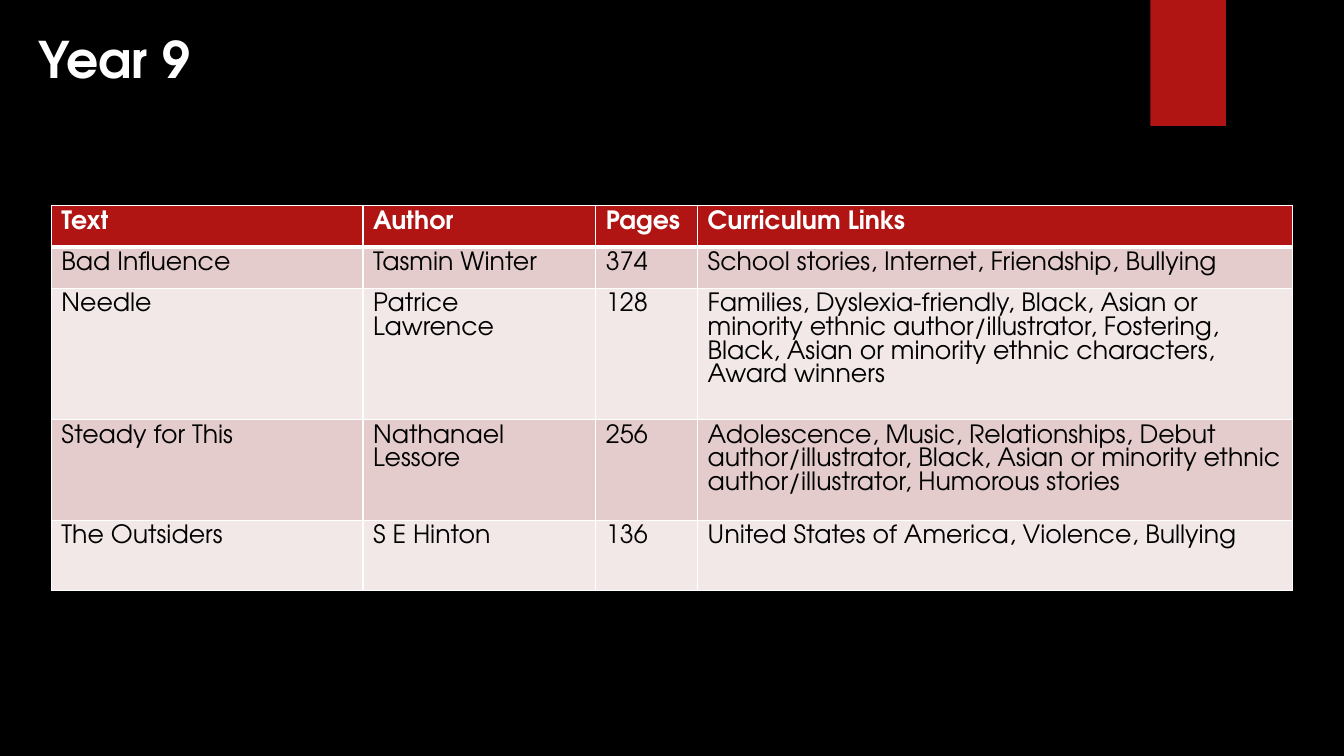
from dataclasses import dataclass

from lxml.etree import SubElement as Sub
from pptx import Presentation
from pptx.dml.color import RGBColor as Rgb
from pptx.enum.shapes import MSO_SHAPE as Shape
from pptx.enum.text import MSO_ANCHOR as Anchor, PP_ALIGN as Align
from pptx.oxml.ns import qn
from pptx.util import Inches, Pt


@dataclass(frozen=True)
class Theme:
    """Colours, font and type sizes of the slide."""
    back: str = "000000"
    red: str = "B01513"
    white: str = "FFFFFF"
    ink: str = "000000"
    bands: tuple = ("E4CCCC", "F2E8E7")
    font: str = "TeX Gyre Adventor"
    title: int = 36
    body: int = 18


THEME = Theme()
COLS = (3.09, 2.31, 1.01, 5.9)
ROWS = (0.41, 0.41, 1.3, 1.0, 0.7)
BOOKS = (
    ("Text", "Author", "Pages", "Curriculum Links"),
    ("Bad Influence", "Tasmin Winter", "374",
     "School stories, Internet, Friendship, Bullying"),
    ("Needle", "Patrice Lawrence", "128",
     "Families, Dyslexia-friendly, Black, Asian or minority ethnic "
     "author/illustrator, Fostering, Black, Asian or minority ethnic "
     "characters, Award winners"),
    ("Steady for This", "Nathanael Lessore", "256",
     "Adolescence, Music, Relationships, Debut author/illustrator, Black, "
     "Asian or minority ethnic author/illustrator, Humorous stories"),
    ("The Outsiders", "S E Hinton", "136",
     "United States of America, Violence, Bullying"),
)


def paint(fill, color):
    """Give a fill one solid colour."""
    fill.solid()
    fill.fore_color.rgb = Rgb.from_string(color)


def write(frame, text, size=THEME.body, color=THEME.ink, bold=False, space=1.0):
    """Put one formatted, left-aligned paragraph in a text frame."""
    frame.word_wrap = True
    para = frame.paragraphs[0]
    para.alignment = Align.LEFT
    para.line_spacing = space
    run = para.add_run()
    run.text = text
    run.font.name = THEME.font
    run.font.size = Pt(size)
    run.font.bold = bold
    run.font.color.rgb = Rgb.from_string(color)


def edge(cell, base):
    """Draw white borders round a cell, with its own weight below."""
    props = cell._tc.get_or_add_tcPr()
    sides = (("a:lnL", 1), ("a:lnR", 1), ("a:lnT", 1), ("a:lnB", base))
    for spot, (tag, width) in enumerate(sides):
        line = Sub(props, qn(tag), w=str(Pt(width)))
        fill = Sub(line, qn("a:solidFill"))
        Sub(fill, qn("a:srgbClr"), val=THEME.white)
        props.insert(spot, line)


def add_title(slide, text):
    """Place and format the slide title."""
    title = slide.shapes.title
    title.left, title.top = Inches(0.28), Inches(0.23)
    title.width, title.height = Inches(5.51), Inches(0.71)
    title.text_frame.vertical_anchor = Anchor.TOP
    write(title.text_frame, text, size=THEME.title, color=THEME.white, bold=True)


def add_tab(slide):
    """Hang the red tab from the top edge."""
    tab = slide.shapes.add_shape(
        Shape.RECTANGLE, Inches(11.41), 0, Inches(0.75), Inches(1.25))
    tab.shadow.inherit = False
    paint(tab.fill, THEME.red)
    tab.line.fill.background()


def add_books(slide):
    """Build the table of books with a red head and banded rows."""
    table = slide.shapes.add_table(
        len(ROWS), len(COLS), Inches(0.51), Inches(2.04),
        Inches(sum(COLS)), Inches(sum(ROWS))).table
    for col, width in zip(table.columns, COLS):
        col.width = Inches(width)
    for num, (row, high, book) in enumerate(zip(table.rows, ROWS, BOOKS)):
        row.height = Inches(high)
        head = num == 0
        for cell, text in zip(row.cells, book):
            paint(cell.fill, THEME.red if head else THEME.bands[(num - 1) % 2])
            edge(cell, 3 if head or num == 0 else 1)
            write(cell.text_frame, text, bold=head,
                  color=THEME.white if head else THEME.ink)


def main():
    """Build and save the slide."""
    deck = Presentation()
    deck.slide_width, deck.slide_height = Inches(13.33), Inches(7.5)
    slide = deck.slides.add_slide(deck.slide_layouts[5])
    paint(slide.background.fill, THEME.back)
    add_tab(slide)
    add_title(slide, "Year 9")
    add_books(slide)
    deck.save("out.pptx")


if __name__ == "__main__":
    main()
